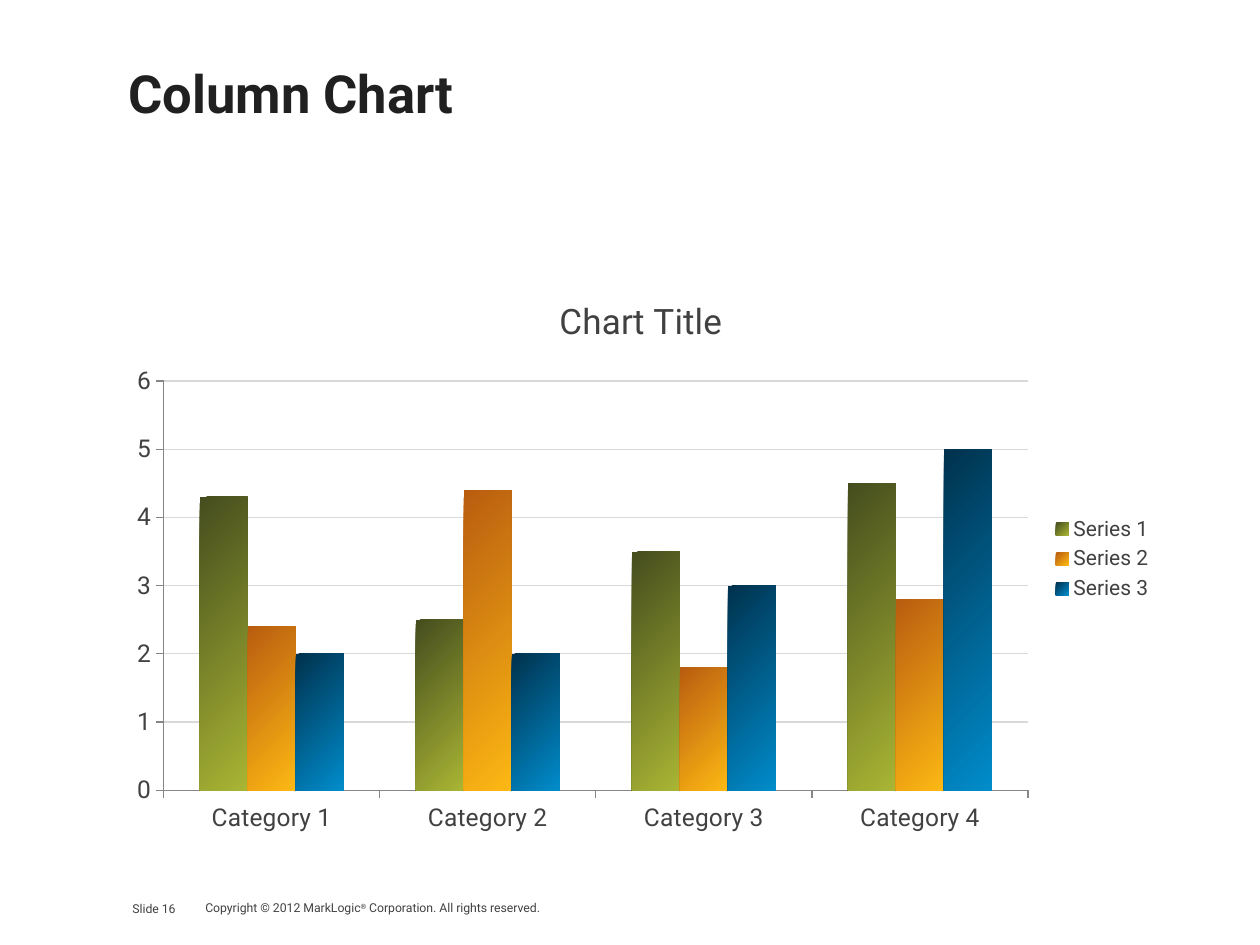
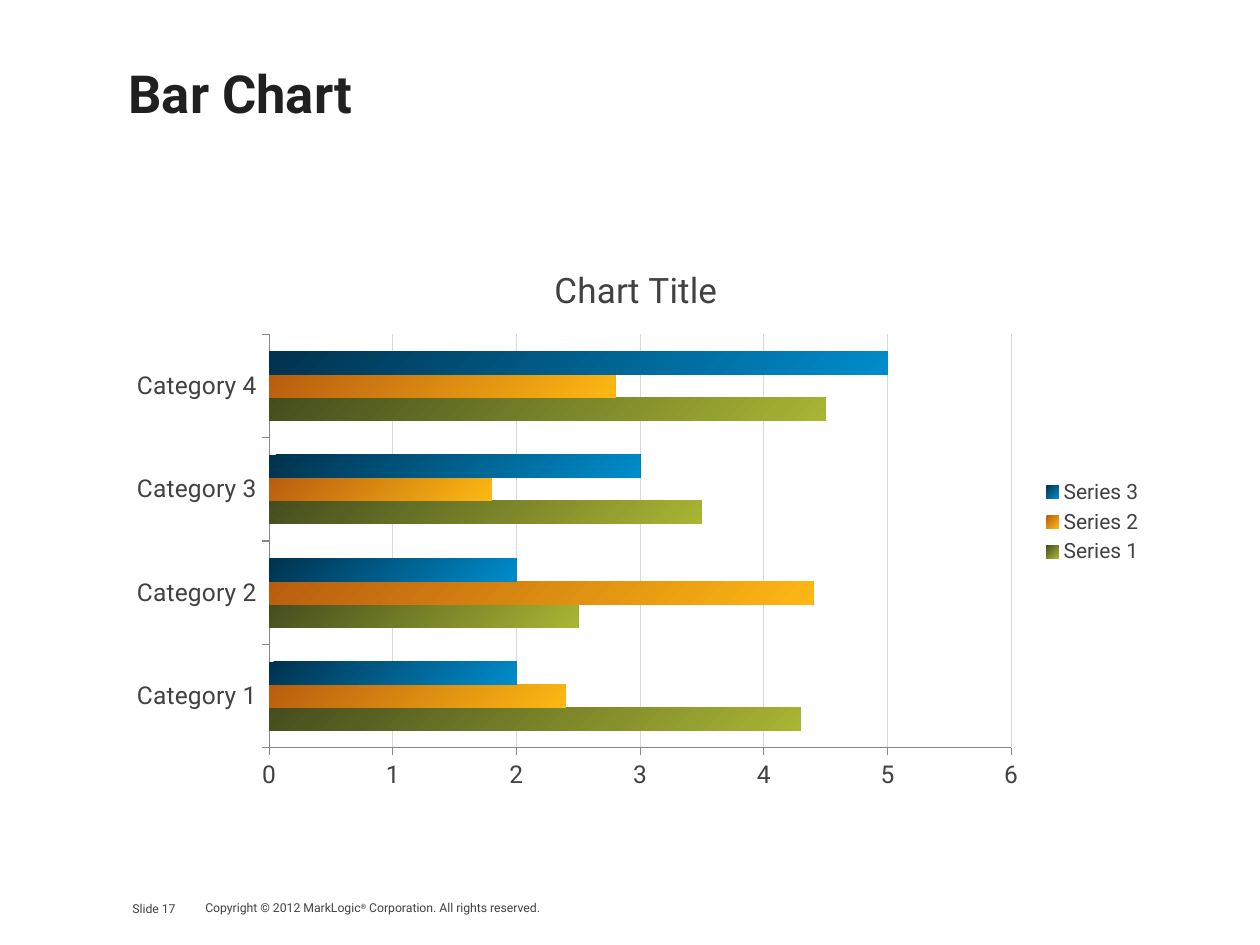
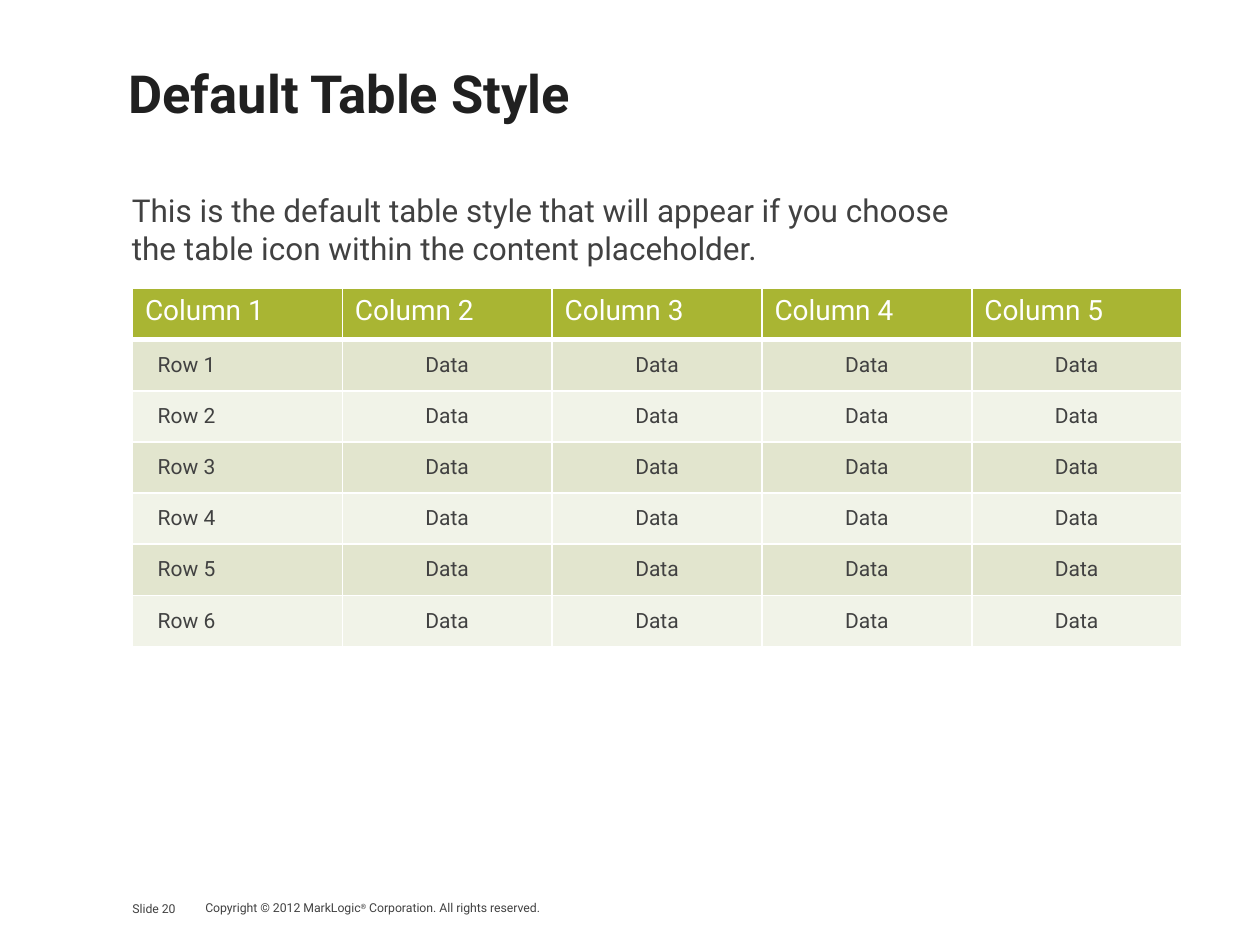
from dataclasses import dataclass

from lxml import etree
from pptx import Presentation
from pptx.chart.data import CategoryChartData
from pptx.dml.color import RGBColor
from pptx.enum.chart import XL_CHART_TYPE as ChartType
from pptx.enum.chart import XL_LEGEND_POSITION as LegendPosition
from pptx.enum.chart import XL_TICK_MARK as TickMark
from pptx.enum.text import MSO_ANCHOR as Anchor
from pptx.enum.text import PP_ALIGN as Align
from pptx.oxml.ns import qn
from pptx.util import Cm, Pt

COPYRIGHT = ("Copyright © 2012 MarkLogic", "®", " Corporation. All rights reserved.")
CHART_TITLE = "Chart Title"
CATEGORIES = ["Category 1", "Category 2", "Category 3", "Category 4"]
SERIES = {
    "Series 1": (4.3, 2.5, 3.5, 4.5),
    "Series 2": (2.4, 4.4, 1.8, 2.8),
    "Series 3": (2, 2, 3, 5),
}
# slide number, title, chart type, chart box (left, top, width, height in cm)
CHART_SLIDES = [
    (16, "Column Chart", ChartType.COLUMN_CLUSTERED, (2.34, 5.51, 21.16, 11.51)),
    (17, "Bar Chart", ChartType.BAR_CLUSTERED, (2.34, 4.88, 20.96, 11.28)),
]
TABLE_INTRO = (
    "This is the default table style that will appear if you choose "
    "the table icon within the content placeholder."
)
TABLE_ROWS = [[f"Column {number}" for number in range(1, 6)]] + [
    [f"Row {number}"] + ["Data"] * 4 for number in range(1, 7)
]
COLUMN_WIDTH, ROW_HEIGHT = 4.23, 1.03


@dataclass(frozen=True)
class Theme:
    font: str = "Roboto"
    heading: str = "202020"
    text: str = "414141"
    white: str = "FFFFFF"
    grid: str = "D9D9D9"
    axis: str = "868686"
    header: str = "A9B533"
    bands: tuple = ("E2E5CE", "F1F3E8")
    gradients: tuple = (
        ("454D1E", "A9B533"),
        ("B85D10", "FDB813"),
        ("00324E", "008CCB"),
    )
    title_size: float = 30
    chart_title_size: float = 20
    body_size: float = 18
    header_size: float = 16
    axis_size: float = 14
    small_size: float = 12
    footer_size: float = 7


THEME = Theme()


def color(value):
    return RGBColor.from_string(value)


def style_font(font, size, value=THEME.text, bold=False):
    font.name = THEME.font
    font.size = Pt(size)
    font.bold = bold
    font.color.rgb = color(value)


def add_text(slide, box, parts, size, value=THEME.text, bold=False, anchor=Anchor.TOP):
    """Add a one-paragraph text box, one run for each part."""
    shape = slide.shapes.add_textbox(*map(Cm, box))
    frame = shape.text_frame
    frame.word_wrap = True
    frame.vertical_anchor = anchor
    paragraph = frame.paragraphs[0]
    for part in parts:
        paragraph.add_run().text = part
    style_font(paragraph.font, size, value, bold)
    return frame


def add_base_slide(presentation, number, title):
    """Add a blank slide with the shared title and footer."""
    slide = presentation.slides.add_slide(presentation.slide_layouts[6])
    number_frame = add_text(
        slide, (2.67, 18.16, 1.65, 0.3), [f"Slide {number}"], THEME.footer_size
    )
    number_frame.margin_left = number_frame.margin_right = 0
    number_frame.margin_top = number_frame.margin_bottom = 0
    copyright_frame = add_text(
        slide, (3.89, 18.03, 12.7, 0.56), COPYRIGHT, THEME.footer_size
    )
    registered_mark = copyright_frame.paragraphs[0].runs[1]
    registered_mark._r.get_or_add_rPr().set("baseline", "30000")
    add_text(slide, (2.34, 0.76, 18.08, 2.21), [title], THEME.title_size,
             THEME.heading, bold=True, anchor=Anchor.MIDDLE)
    return slide


def style_axis(axis):
    axis.major_tick_mark = TickMark.OUTSIDE
    axis.minor_tick_mark = TickMark.NONE
    axis.format.line.color.rgb = color(THEME.axis)
    axis.format.line.width = Pt(0.75)
    style_font(axis.tick_labels.font, THEME.axis_size)


def add_series_chart(slide, chart_type, box):
    data = CategoryChartData()
    data.categories = CATEGORIES
    for name, values in SERIES.items():
        data.add_series(name, values)
    chart = slide.shapes.add_chart(chart_type, *map(Cm, box), data).chart
    style_font(chart.font, THEME.body_size)

    chart.has_title = True
    title_frame = chart.chart_title.text_frame
    title_frame.text = CHART_TITLE
    style_font(title_frame.paragraphs[0].font, THEME.chart_title_size)

    chart.has_legend = True
    chart.legend.position = LegendPosition.RIGHT
    chart.legend.include_in_layout = False
    style_font(chart.legend.font, THEME.small_size)

    style_axis(chart.category_axis)
    value_axis = chart.value_axis
    style_axis(value_axis)
    value_axis.minimum_scale, value_axis.maximum_scale = 0, 6
    value_axis.major_unit = 1
    value_axis.has_major_gridlines = True
    grid_line = value_axis.major_gridlines.format.line
    grid_line.color.rgb = color(THEME.grid)
    grid_line.width = Pt(0.75)

    plot = chart.plots[0]
    plot.gap_width = 150
    plot.overlap = 0
    plot.vary_by_categories = False
    for series, gradient in zip(plot.series, THEME.gradients):
        fill = series.format.fill
        fill.gradient()
        fill.gradient_angle = 315
        for stop, value in zip(fill.gradient_stops, gradient):
            stop.color.rgb = color(value)


def set_borders(cell, top=1, bottom=1):
    """Give the cell white borders; widths are in points."""
    properties = cell._tc.get_or_add_tcPr()
    widths = {"lnL": 1, "lnR": 1, "lnT": top, "lnB": bottom}
    for position, (side, width) in enumerate(widths.items()):
        line = etree.Element(qn(f"a:{side}"), w=str(Pt(width)))
        fill = etree.SubElement(line, qn("a:solidFill"))
        etree.SubElement(fill, qn("a:srgbClr"), val=THEME.white)
        properties.insert(position, line)


def add_data_table(slide):
    row_count, column_count = len(TABLE_ROWS), len(TABLE_ROWS[0])
    table = slide.shapes.add_table(
        row_count, column_count, Cm(2.67), Cm(5.82),
        Cm(COLUMN_WIDTH * column_count), Cm(ROW_HEIGHT * row_count),
    ).table
    for column in table.columns:
        column.width = Cm(COLUMN_WIDTH)
    for row_index, labels in enumerate(TABLE_ROWS):
        table.rows[row_index].height = Cm(ROW_HEIGHT)
        is_header = row_index == 0
        for column_index, label in enumerate(labels):
            cell = table.cell(row_index, column_index)
            cell.text = label
            paragraph = cell.text_frame.paragraphs[0]
            cell.fill.solid()
            if is_header:
                cell.fill.fore_color.rgb = color(THEME.header)
                style_font(paragraph.font, THEME.header_size, THEME.white)
            else:
                cell.fill.fore_color.rgb = color(THEME.bands[(row_index - 1) % 2])
                cell.vertical_anchor = Anchor.MIDDLE
                style_font(paragraph.font, THEME.small_size)
                if column_index == 0:
                    cell.margin_left = Cm(0.51)
                else:
                    paragraph.alignment = Align.CENTER
            set_borders(cell, top=3 if row_index == 1 else 1,
                        bottom=3 if is_header else 1)


def main():
    presentation = Presentation()
    presentation.slide_width, presentation.slide_height = Cm(25.4), Cm(19.05)
    for number, title, chart_type, box in CHART_SLIDES:
        slide = add_base_slide(presentation, number, title)
        add_series_chart(slide, chart_type, box)
    table_slide = add_base_slide(presentation, 20, "Default Table Style")
    add_data_table(table_slide)
    add_text(table_slide, (2.41, 3.73, 17.53, 2.57), [TABLE_INTRO], THEME.body_size)
    presentation.save("out.pptx")


if __name__ == "__main__":
    main()
